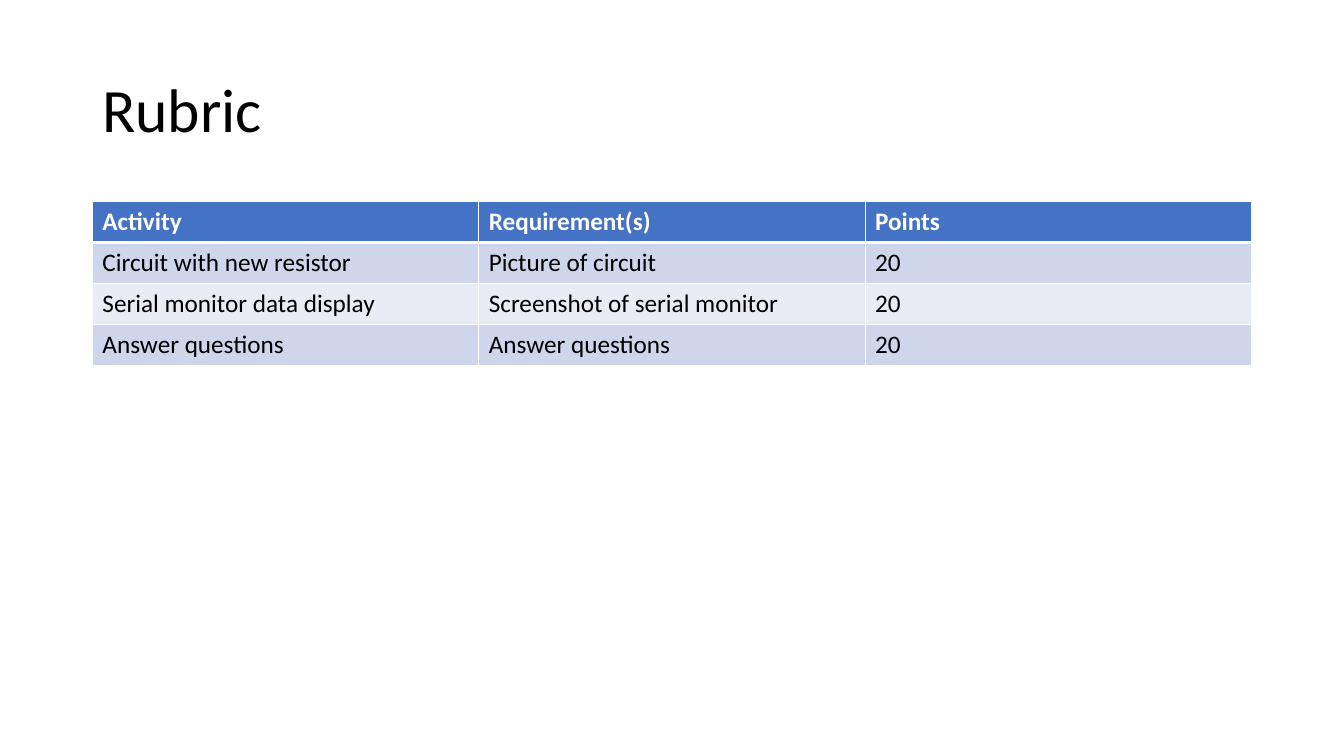
"""Build the rubric slide: a title above a table of activities and points."""
from lxml import etree
from pptx import Presentation
from pptx import util as u
from pptx.dml.color import RGBColor
from pptx.enum import text
from pptx.oxml import ns

PX = 9525
LEFT, WIDTH, ROW_H = 88, 1104, 39
WHITE, BLACK, BLUE = "FFFFFF", "000000", "4472C4"
BANDS = ["CFD5EA", "E9EBF5"]
ROWS = [
    ["Activity", "Requirement(s)", "Points"],
    ["Circuit with new resistor", "Picture of circuit", "20"],
    ["Serial monitor data display", "Screenshot of serial monitor", "20"],
    ["Answer questions", "Answer questions", "20"],
]


def rgb(value):
    return RGBColor.from_string(value)


def add_run(p, words, size, color, bold=False):
    r = p.add_run()
    r.text = words
    r.font.name = "Calibri"
    r.font.size = u.Pt(size)
    r.font.bold = bold
    r.font.color.rgb = rgb(color)


prs = Presentation()
prs.slide_width, prs.slide_height = 1280 * PX, 720 * PX
s = prs.slides.add_slide(prs.slide_layouts[6])

sp = s.shapes.add_textbox(LEFT * PX, 38 * PX, WIDTH * PX, 139 * PX)
tf = sp.text_frame
tf.word_wrap = True
tf.vertical_anchor = text.MSO_ANCHOR.MIDDLE
p = tf.paragraphs[0]
p.line_spacing = 0.9
add_run(p, "Rubric", 44, BLACK)

table = s.shapes.add_table(len(ROWS), len(ROWS[0]), LEFT * PX, 192 * PX,
                           WIDTH * PX, len(ROWS) * ROW_H * PX).table
for i, row in enumerate(ROWS):
    header = i == 0
    for j, words in enumerate(row):
        cell = table.cell(i, j)
        cell.fill.solid()
        cell.fill.fore_color.rgb = rgb(BLUE if header else BANDS[(i - 1) % 2])
        add_run(cell.text_frame.paragraphs[0], words, 18,
                WHITE if header else BLACK, header)
        tc_pr = cell._tc.get_or_add_tcPr()
        heavy = {0: "lnB", 1: "lnT"}.get(i)
        for k, side in enumerate(["lnL", "lnR", "lnT", "lnB"]):
            ln = etree.Element(ns.qn("a:" + side), w=str(u.Pt(3 if side == heavy else 1)))
            fill = etree.SubElement(ln, ns.qn("a:solidFill"))
            etree.SubElement(fill, ns.qn("a:srgbClr"), val=WHITE)
            tc_pr.insert(k, ln)

prs.save("out.pptx")
